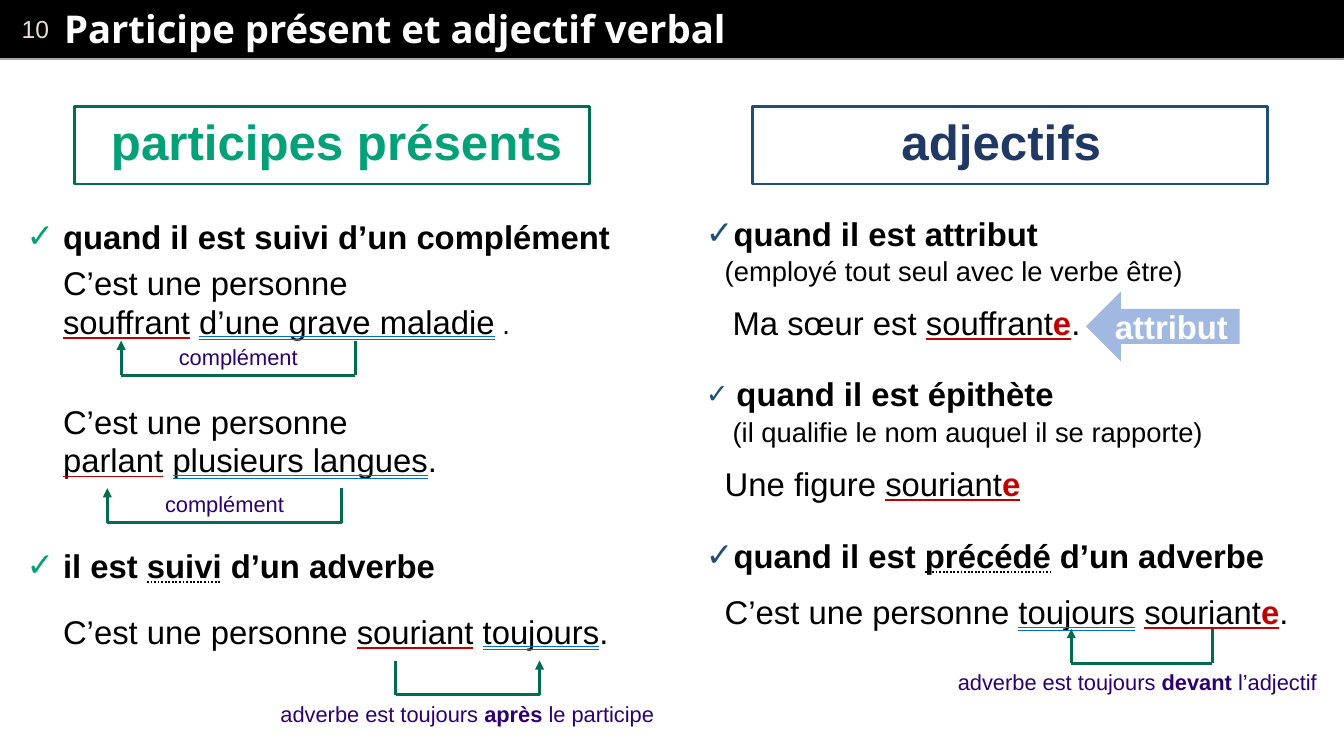
from lxml import etree
from pptx import Presentation
from pptx.dml.color import RGBColor
from pptx.enum.shapes import MSO_CONNECTOR, MSO_SHAPE
from pptx.enum.text import MSO_ANCHOR, MSO_AUTO_SIZE, MSO_UNDERLINE, PP_ALIGN
from pptx.oxml.ns import qn
from pptx.util import Emu, Pt

STRAIGHT = MSO_CONNECTOR.STRAIGHT
RECTANGLE, LEFT_ARROW = MSO_SHAPE.RECTANGLE, MSO_SHAPE.LEFT_ARROW
TOP, MIDDLE = MSO_ANCHOR.TOP, MSO_ANCHOR.MIDDLE
LEFT, CENTER = PP_ALIGN.LEFT, PP_ALIGN.CENTER
SINGLE = MSO_UNDERLINE.SINGLE_LINE
DOUBLE = MSO_UNDERLINE.DOUBLE_LINE
DOTTED = MSO_UNDERLINE.DOTTED_LINE

EMU_PER_PX = 9144  # 100 px to the inch
BLACK, WHITE, RED, BLUE = "000000", "FFFFFF", "C00000", "0070C0"
GREEN, DARK_GREEN, NAVY, STEEL = "04A078", "036B50", "203864", "1F4E79"
VIOLET = "2D0070"
BREAK = ("\n", "")

# Run styles, added to the settings of the paragraph
STYLES = {
    "": {},
    "bold": {"bold": True},
    "small": {"size": 20},
    "participle": {"underline": SINGLE, "underline_color": RED},
    "complement": {"underline": DOUBLE, "underline_color": BLUE},
    "dotted": {"underline": DOTTED, "underline_color": BLACK},
    "ending": {"bold": True, "color": RED, "underline": SINGLE, "underline_color": RED},
}

# Paragraphs: size, bold, bullet size in percent, space before, indent, runs
PRESENT_PARTICIPLES = [
    (24, True, 100, 0, 37, [("quand il est suivi d’un complément", "")]),
    (24, False, 0, 8, 37, [
        ("C’est une personne", ""), BREAK, ("souffrant", "participle"), (" ", ""),
        ("d’une grave maladie", "complement"), (" .", "small")]),
    (24, False, 0, 63, 37, [
        ("C’est une personne", ""), BREAK, ("parlant", "participle"), (" ", ""),
        ("plusieurs langues", "complement"), (".", "")]),
    (24, True, 100, 68, 37, [
        ("il est ", ""), ("suivi", "dotted"), (" d’un adverbe", "")]),
    (24, False, 0, 28, 37, [
        ("C’est une personne ", ""), ("souriant", "participle"), (" ", ""),
        ("toujours", "complement"), (".", "")]),
]
ADJECTIVES = [
    (24, True, 100, 0, 26, [("quand il est attribut", "")]),
    (20, False, 0, 0, 19, [("(employé tout seul avec le verbe être)", "")]),
    (24, False, 0, 22, 27, [
        ("Ma sœur est ", ""), ("souffrant", "participle"), ("e", "ending"), (".", "")]),
    (24, True, 83, 39, 31, [("quand il est épithète", "")]),
    (20, False, 0, 1, 27, [("(il qualifie le nom auquel il se rapporte)", "")]),
    (24, False, 0, 22, 19, [
        ("Une figure ", ""), ("souriant", "participle"), ("e", "ending")]),
    (24, True, 100, 39, 26, [
        ("quand il est ", ""), ("précédé", "dotted"), (" d’un adverbe", "")]),
    (24, False, 0, 23, 19, [
        ("C’est une personne ", ""), ("toujours", "complement"), (" ", ""),
        ("souriant", "participle"), ("e", "ending"), (".", "")]),
]


def px(value):
    return Emu(value * EMU_PER_PX)


def rgb(code):
    return RGBColor.from_string(code)


def add_run(para, text, size, color, bold=False, font="Arial",
            underline=None, underline_color=None):
    run = para.add_run()
    run.text = text
    run.font.size, run.font.bold = Pt(size), bold
    run.font.color.rgb = rgb(color)
    run.font.name = font
    if underline:
        run.font.underline = underline
        fill = etree.Element(qn("a:uFill"))
        solid = etree.SubElement(fill, qn("a:solidFill"))
        etree.SubElement(solid, qn("a:srgbClr"), val=underline_color)
        run.font._element.find(qn("a:latin")).addprevious(fill)


def add_styled_runs(para, runs, size, color, bold=False):
    for text, style in runs:
        if text == "\n":
            para.add_line_break()
        else:
            add_run(para, text, **{"size": size, "color": color, "bold": bold, **STYLES[style]})


def set_bullet(para, color, percent):
    properties = para._p.get_or_add_pPr()
    if not percent:
        etree.SubElement(properties, qn("a:buNone"))
        return
    bullet_color = etree.SubElement(properties, qn("a:buClr"))
    etree.SubElement(bullet_color, qn("a:srgbClr"), val=color)
    etree.SubElement(properties, qn("a:buSzPct"), val=str(percent * 1000))
    etree.SubElement(properties, qn("a:buChar"), char="✓")


def place(shape, box):
    shape.left, shape.top, shape.width, shape.height = map(px, box)


def set_frame(shape, insets, anchor, wrap=True):
    frame = shape.text_frame
    frame.auto_size = MSO_AUTO_SIZE.NONE
    frame.word_wrap, frame.vertical_anchor = wrap, anchor
    (frame.margin_left, frame.margin_top,
     frame.margin_right, frame.margin_bottom) = map(px, insets)
    return frame.paragraphs[0]


def add_line(page, start, end, color, width, arrow=False):
    line = page.shapes.add_connector(STRAIGHT, *map(px, start + end))
    line.line.color.rgb, line.line.width = rgb(color), Pt(width)
    if arrow:
        etree.SubElement(line.line._get_or_add_ln(), qn("a:tailEnd"), type="triangle")
    etree.SubElement(line._element.spPr, qn("a:effectLst"))


def add_box(page, kind, box):
    shape = page.shapes.add_shape(kind, *map(px, box))
    shape.shadow.inherit = False
    return shape


def add_title_band(page, box, number, title):
    left, top, width, height = box
    band = add_box(page, RECTANGLE, box)
    band.fill.solid()
    band.fill.fore_color.rgb = band.line.color.rgb = rgb(BLACK)
    para = set_frame(band, (22, 5, 10, 5), MIDDLE)
    para.alignment = LEFT
    add_run(para, number, 18, "E7DED1")
    add_line(page, (left, top + height + 2), (left + width, top + height + 2), "A6A6A6", 2)

    heading = page.shapes.title
    heading._element.addprevious(band._element)
    place(heading, (left + 61, top + 1, width - 80, height - 2))
    para = set_frame(heading, (4, 4, 4, 4), MIDDLE)
    para.alignment = LEFT
    add_run(para, title, 28, WHITE, True, "Open Sans")


def add_heading_box(page, box, text, color, line_color, left_inset, right_inset):
    shape = add_box(page, RECTANGLE, box)
    shape.fill.background()
    shape.line.color.rgb, shape.line.width = rgb(line_color), Pt(2)
    para = set_frame(shape, (left_inset, 0, right_inset, 8), MIDDLE)
    para.alignment = CENTER
    add_run(para, text, 36, color, True)


def add_rules(body, box, rules, bullet_color, line_height):
    place(body, box)
    para = set_frame(body, (0, 0, 0, 0), TOP)
    for index, (size, bold, bullet, before, indent, runs) in enumerate(rules):
        if index:
            para = body.text_frame.add_paragraph()
        properties = para._p.get_or_add_pPr()
        properties.set("marL", str(px(indent)))
        properties.set("indent", str(px(-indent if bullet else 0)))
        set_bullet(para, bullet_color, bullet)
        para.alignment = LEFT
        para.line_spacing = px(line_height)
        para.space_before, para.space_after = px(before), px(0)
        add_styled_runs(para, runs, size, BLACK, bold)


def add_bracket(page, start, end, top, depth=35):
    corners = [(start, top), (start, top + depth), (end, top + depth), (end, top)]
    for index in range(3):
        add_line(page, corners[index], corners[index + 1], DARK_GREEN, 2.25, index == 2)


def add_label(page, box, runs, alignment=LEFT):
    label = page.shapes.add_textbox(*map(px, box))
    para = set_frame(label, (10, 5, 10, 5), TOP)
    para.alignment = alignment
    add_styled_runs(para, runs, 16, VIOLET)


def add_attribute_arrow(page, box):
    arrow = add_box(page, LEFT_ARROW, box)
    arrow.fill.solid()
    arrow.fill.fore_color.rgb = rgb("4472C4")
    color = arrow._element.spPr.find(qn("a:solidFill")).find(qn("a:srgbClr"))
    etree.SubElement(color, qn("a:alpha"), val="50000")
    arrow.line.fill.background()
    para = set_frame(arrow, (10, 5, 10, 5), MIDDLE, False)
    para.alignment = CENTER
    add_run(para, "attribut", 24, WHITE, True)


def main():
    deck = Presentation()
    deck.slide_width, deck.slide_height = px(1365), px(768)
    page = deck.slides.add_slide(deck.slide_layouts[3])
    add_title_band(page, (0, 0, 1365, 58), "10", "Participe présent et adjectif verbal")

    # Two columns of rules
    add_heading_box(page, (76, 108, 523, 79), "participes présents", GREEN, DARK_GREEN, 9, 0)
    add_heading_box(page, (764, 108, 523, 79), "adjectifs", NAVY, STEEL, 0, 17)
    add_rules(page.placeholders[1], (27, 221, 640, 450), PRESENT_PARTICIPLES, GREEN, 39)
    add_rules(page.placeholders[2], (717, 223, 640, 430), ADJECTIVES, STEEL, 34)
    add_attribute_arrow(page, (1103, 296, 156, 71))

    # Brackets and their labels
    for start, end, top in [(361, 123, 346), (347, 109, 496), (402, 548, 671), (1231, 1088, 639)]:
        add_bracket(page, start, end, top)
    for left, top in [(123, 344), (109, 494)]:
        add_label(page, (left, top, 238, 37), [("complément", "")], CENTER)
    for box, adverb_place, word in [((275, 707, 402, 37), "après", " le participe"),
                                    ((963, 674, 393, 37), "devant", " l’adjectif")]:
        add_label(page, box, [("adverbe est toujours ", ""), (adverb_place, "bold"), (word, "")])
    deck.save("out.pptx")


if __name__ == "__main__":
    main()
